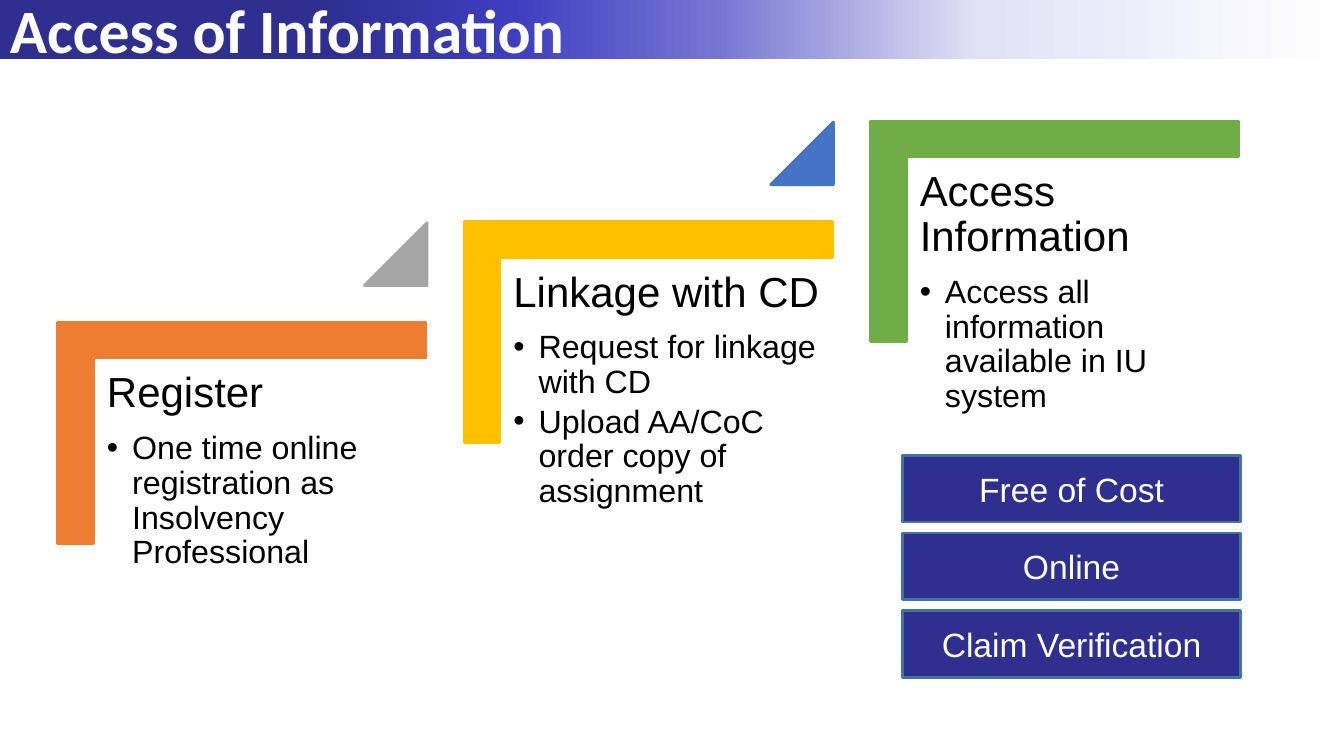
from copy import deepcopy

from lxml.etree import SubElement
from pptx import Presentation
from pptx.dml.color import RGBColor
from pptx.enum.shapes import MSO_SHAPE
from pptx.enum.text import MSO_ANCHOR, PP_ALIGN
from pptx.oxml.ns import qn
from pptx.util import Pt

COLORS = {
    "navy": "2E2F8F", "edge": "43739E", "white": "FFFFFF", "black": "000000",
    "orange": "ED7D31", "gray": "A5A5A5", "gold": "FFC000",
    "blue": "4472C4", "green": "70AD47",
}
BANNER_STOPS = [(0, "FFFFFF"), (27, "E2E2F6"), (47, "7575D2"),
                (62, "3E3EC0"), (76, "2E2F8F"), (100, "2E2F8F")]
TITLE_FONT = {"name": "Calibri", "size": Pt(44), "bold": True}
HEADING_FONT = {"name": "Arial", "size": Pt(30)}
BULLET_FONT = {"name": "Arial", "size": Pt(23)}
BUTTON_FONT = {"name": "Arial", "size": Pt(24)}

STEPS = [
    ("Register", ["One time online registration as Insolvency Professional"],
     "orange", "gray"),
    ("Linkage with CD", ["Request for linkage with CD",
                         "Upload AA/CoC order copy of assignment"],
     "gold", "blue"),
    ("Access Information", ["Access all information available in IU system"],
     "green", None),
]
BUTTONS = ["Free of Cost", "Online", "Claim Verification"]


def rgb(name):
    return RGBColor.from_string(COLORS[name])


def set_attributes(target, values):
    for name, value in values.items():
        setattr(target, name, value)


def write(paragraph, text, font, color, **layout):
    paragraph.text = text
    set_attributes(paragraph, layout)
    set_attributes(paragraph.font, font)
    paragraph.font.color.rgb = rgb(color)


def paint(shape, fill, line):
    shape.shadow.inherit = False
    shape.fill.solid()
    shape.fill.fore_color.rgb = rgb(fill)
    shape.line.color.rgb = rgb(line)
    shape.line.width = Pt(2)


def add_shape(slide, kind, box, fill, line):
    shape = slide.shapes.add_shape(kind, *(Pt(length) for length in box))
    paint(shape, fill, line)
    return shape


def add_text_frame(slide, box, margins, anchor):
    frame = slide.shapes.add_textbox(*(Pt(length) for length in box)).text_frame
    frame.word_wrap = True
    frame.vertical_anchor = anchor
    sides = ("margin_left", "margin_top", "margin_right", "margin_bottom")
    set_attributes(frame, {side: Pt(margin) for side, margin in zip(sides, margins)})
    return frame


def add_bullet(paragraph):
    properties = paragraph._p.get_or_add_pPr()
    properties.set("marL", str(Pt(18)))
    properties.set("indent", str(Pt(-18)))
    color = SubElement(properties, qn("a:buClr"))
    SubElement(color, qn("a:srgbClr")).set("val", COLORS["black"])
    SubElement(properties, qn("a:buFont")).set("typeface", "Arial")
    SubElement(properties, qn("a:buChar")).set("char", "•")


def add_banner(slide, left, top, width, height):
    banner = add_shape(slide, MSO_SHAPE.RECTANGLE, (left, top, width, height),
                       "navy", "navy")
    banner.line.fill.background()
    banner.fill.gradient()
    banner.fill.gradient_angle = 180
    stop_list = banner._element.spPr.find(".//" + qn("a:gsLst"))
    for _ in BANNER_STOPS[2:]:
        stop_list.append(deepcopy(stop_list[0]))
    for stop, (position, color) in zip(banner.fill.gradient_stops, BANNER_STOPS):
        stop.position = position / 100
        stop.color.rgb = RGBColor.from_string(color)

    frame = add_text_frame(slide, (left, top, 853, 47.5), (7.2, 3.6, 7.2, 3.6),
                           MSO_ANCHOR.MIDDLE)
    write(frame.paragraphs[0], "Access of Information", TITLE_FONT, "white",
          line_spacing=0.9)


def add_bracket(slide, left, top, width, height, color):
    """Draw a top bar and a left bar joined at the upper left corner."""
    bar = 0.161 * height
    outline = [(width, 0), (width, bar), (bar, bar), (bar, height), (0, height)]
    builder = slide.shapes.build_freeform(Pt(left), Pt(top))
    builder.add_line_segments([(Pt(left + x), Pt(top + y)) for x, y in outline])
    paint(builder.convert_to_shape(), color, color)


def add_step(slide, left, top, width, height, step):
    """Place a corner bracket, its text, and the triangle leading to the next step."""
    heading, bullets, color, triangle_color = step
    add_bracket(slide, left, top, width, height, color)

    frame = add_text_frame(slide, (left + 26.5, top + 26.5, 237, 208), [8.6] * 4,
                           MSO_ANCHOR.TOP)
    write(frame.paragraphs[0], heading, HEADING_FONT, "black",
          line_spacing=0.9, space_after=Pt(10.5))
    for bullet in bullets:
        paragraph = frame.add_paragraph()
        add_bullet(paragraph)
        write(paragraph, bullet, BULLET_FONT, "black",
              line_spacing=0.9, space_after=Pt(3.5))

    if triangle_color:
        size = 44.7
        triangle = add_shape(slide, MSO_SHAPE.ISOSCELES_TRIANGLE,
                             (left + width - size + 0.7, top - 71.2, size, size),
                             triangle_color, triangle_color)
        triangle.adjustments[0] = 1


def add_staircase(slide, left, top):
    for index, step in enumerate(STEPS):
        add_step(slide, left + index * 290.3, top - index * 72, 263, 157.7, step)


def add_buttons(slide, left, top, width, height):
    for index, label in enumerate(BUTTONS):
        button = add_shape(slide, MSO_SHAPE.RECTANGLE,
                           (left, top + index * 55.4, width, height), "navy", "edge")
        button.text_frame.vertical_anchor = MSO_ANCHOR.MIDDLE
        write(button.text_frame.paragraphs[0], label, BUTTON_FONT, "white",
              alignment=PP_ALIGN.CENTER)


def main():
    presentation = Presentation()
    presentation.slide_width = Pt(960)
    presentation.slide_height = Pt(540)
    slide = presentation.slides.add_slide(presentation.slide_layouts[6])
    add_banner(slide, 0, 0, 960, 42.5)
    add_staircase(slide, 41.3, 230.4)
    add_buttons(slide, 644.4, 325.4, 242, 47.5)
    presentation.save("out.pptx")


if __name__ == "__main__":
    main()
